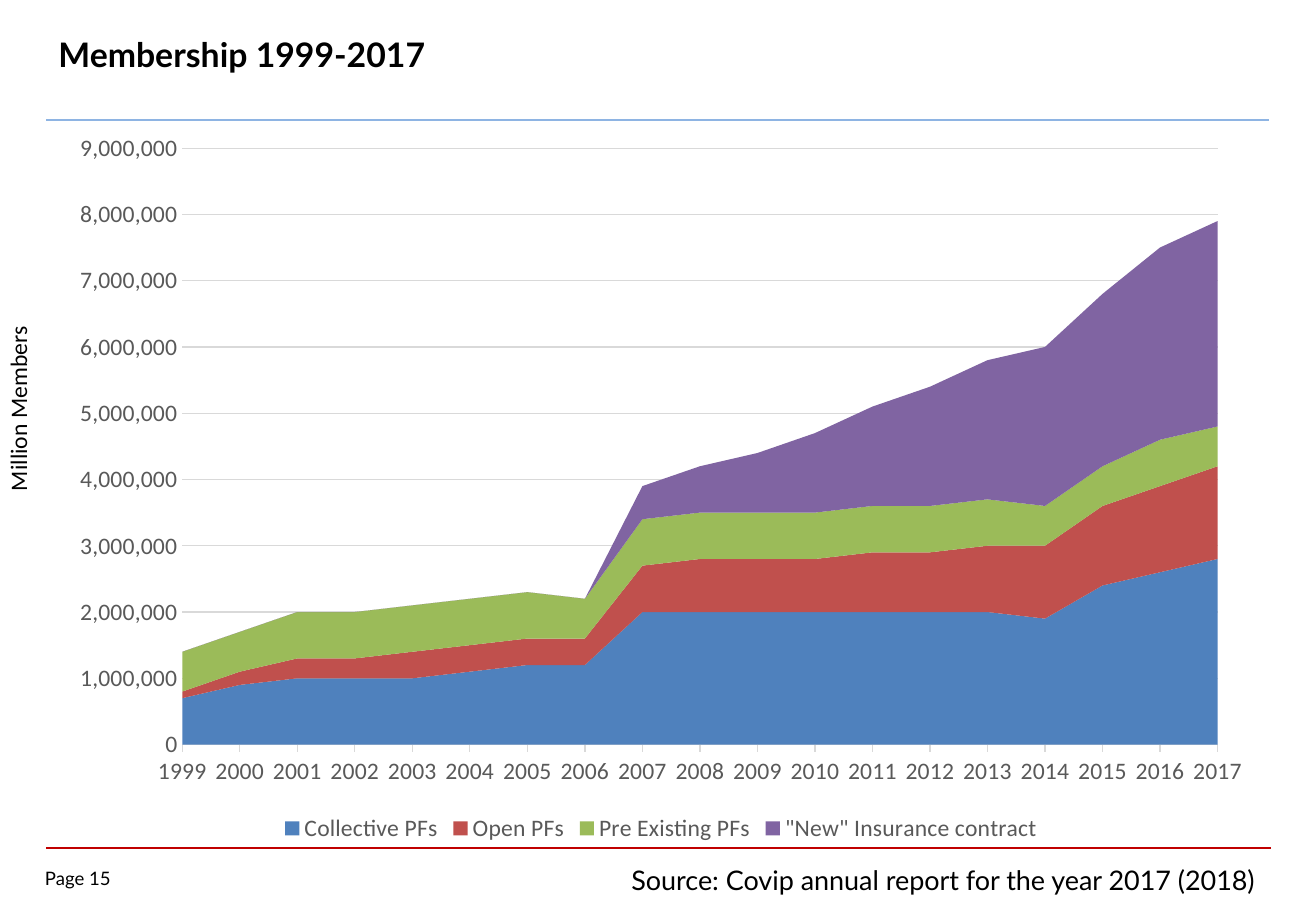
from dataclasses import dataclass

from lxml.etree import SubElement
from pptx import Presentation
from pptx.chart.data import CategoryChartData
from pptx.dml.color import RGBColor
from pptx.enum.chart import XL_CHART_TYPE as ChartType
from pptx.enum.chart import XL_LEGEND_POSITION as LegendPosition
from pptx.enum.chart import XL_TICK_MARK as TickMark
from pptx.enum.shapes import MSO_CONNECTOR as Connector
from pptx.enum.text import MSO_ANCHOR as Anchor
from pptx.oxml.ns import qn
from pptx.slide import Slide
from pptx.util import Cm, Pt

COLORS = {
    "black": "000000",
    "axis_text": "595959",
    "grid": "D9D9D9",
    "header_rule": "8EB4E3",
    "footer_rule": "C00000",
    "blue": "4F81BD",
    "red": "C0504D",
    "green": "9BBB59",
    "purple": "8064A2",
}


@dataclass(frozen=True)
class Rule:
    left: float
    right: float
    top: float
    color: str
    weight: float


@dataclass(frozen=True)
class Label:
    text: str
    left: float
    top: float
    width: float
    height: float
    size: int
    font: str = "Lato"
    bold: bool = False
    margins: bool = True
    anchor: Anchor = Anchor.TOP
    wrap: bool = True
    vertical: bool = False


@dataclass(frozen=True)
class Fund:
    name: str
    color: str
    hundred_thousands: list[int]


RULES = [
    Rule(0.97, 26.57, 17.73, "footer_rule", 1),
    Rule(0.97, 26.52, 2.51, "header_rule", 1.5),
]

LABELS = [
    Label("Page 15", 0.94, 18.14, 1.85, 0.56, 11, margins=False, wrap=False),
    Label("Membership 1999-2017", 0.97, 0.23, 25.2, 1.8, 20,
          bold=True, anchor=Anchor.MIDDLE),
    Label("Million Members", -0.05, 5.26, 1.12, 5.26, 14,
          font="Calibri", vertical=True),
    Label("Source: Covip annual report for the year 2017 (2018)",
          12.95, 17.93, 14.4, 0.94, 16),
]

YEARS = range(1999, 2018)

FUNDS = [
    Fund("Collective PFs", "blue",
         [7, 9, 10, 10, 10, 11, 12, 12, 20, 20, 20, 20, 20, 20, 20, 19, 24, 26, 28]),
    Fund("Open PFs", "red",
         [1, 2, 3, 3, 4, 4, 4, 4, 7, 8, 8, 8, 9, 9, 10, 11, 12, 13, 14]),
    Fund("Pre Existing PFs", "green",
         [6, 6, 7, 7, 7, 7, 7, 6, 7, 7, 7, 7, 7, 7, 7, 6, 6, 7, 6]),
    Fund('"New" Insurance contract', "purple",
         [0] * 8 + [5, 7, 9, 12, 15, 18, 21, 24, 26, 29, 31]),
]


def rgb(name: str) -> RGBColor:
    return RGBColor.from_string(COLORS[name])


def style_font(font, name: str, size: int, color: str, bold: bool = False) -> None:
    font.name = name
    font.size = Pt(size)
    font.bold = bold
    font.color.rgb = rgb(color)


def style_line(line, color: str, weight: float) -> None:
    line.color.rgb = rgb(color)
    line.width = Pt(weight)


def draw_rule(slide: Slide, rule: Rule) -> None:
    connector = slide.shapes.add_connector(
        Connector.STRAIGHT, Cm(rule.left), Cm(rule.top), Cm(rule.right), Cm(rule.top))
    style_line(connector.line, rule.color, rule.weight)
    SubElement(connector._element.spPr, qn("a:effectLst"))


def draw_label(slide: Slide, label: Label) -> None:
    box = slide.shapes.add_textbox(
        Cm(label.left), Cm(label.top), Cm(label.width), Cm(label.height))
    frame = box.text_frame
    frame.word_wrap = label.wrap
    frame.vertical_anchor = label.anchor
    if not label.margins:
        frame.margin_left = frame.margin_right = 0
        frame.margin_top = frame.margin_bottom = 0
    if label.vertical:
        frame._txBody.bodyPr.set("vert", "vert270")
    para = frame.paragraphs[0]
    para.text = label.text
    style_font(para.font, label.font, label.size, "black", label.bold)


def draw_membership_chart(slide: Slide) -> None:
    data = CategoryChartData(number_format="#,##0")
    data.categories = [str(year) for year in YEARS]
    for fund in FUNDS:
        data.add_series(fund.name, [value * 100_000 for value in fund.hundred_thousands])
    chart = slide.shapes.add_chart(
        ChartType.AREA_STACKED, Cm(1.17), Cm(2.49), Cm(25.3), Cm(15.24), data).chart
    style_font(chart.font, "Calibri", 14, "black")
    chart.has_title = False
    chart.has_legend = True
    chart.legend.position = LegendPosition.BOTTOM
    chart.legend.include_in_layout = False
    style_font(chart.legend.font, "Calibri", 14, "axis_text")

    plot = chart.plots[0]
    plot.vary_by_categories = False
    for series, fund in zip(plot.series, FUNDS):
        series.format.fill.solid()
        series.format.fill.fore_color.rgb = rgb(fund.color)
        series.format.line.fill.background()

    years, members = chart.category_axis, chart.value_axis
    for axis in (years, members):
        style_font(axis.tick_labels.font, "Calibri", 14, "axis_text")
        axis.minor_tick_mark = TickMark.NONE
    years.major_tick_mark = TickMark.OUTSIDE
    years.has_major_gridlines = False
    style_line(years.format.line, "grid", 0.75)
    members.major_tick_mark = TickMark.NONE
    members.minimum_scale = 0
    members.maximum_scale = 9_000_000
    members.major_unit = 1_000_000
    members.has_major_gridlines = True
    style_line(members.major_gridlines.format.line, "grid", 0.75)
    members.format.line.fill.background()
    members.tick_labels.number_format = "#,##0"
    members.tick_labels.number_format_is_linked = False
    for crossing in members._element.findall(qn("c:crossBetween")):
        crossing.set("val", "midCat")


def main() -> None:
    deck = Presentation()
    deck.slide_width, deck.slide_height = Cm(27.51), Cm(19.05)
    page = deck.slides.add_slide(deck.slide_layouts[6])
    for rule in RULES:
        draw_rule(page, rule)
    draw_membership_chart(page)
    for label in LABELS:
        draw_label(page, label)
    deck.save("out.pptx")


if __name__ == "__main__":
    main()
